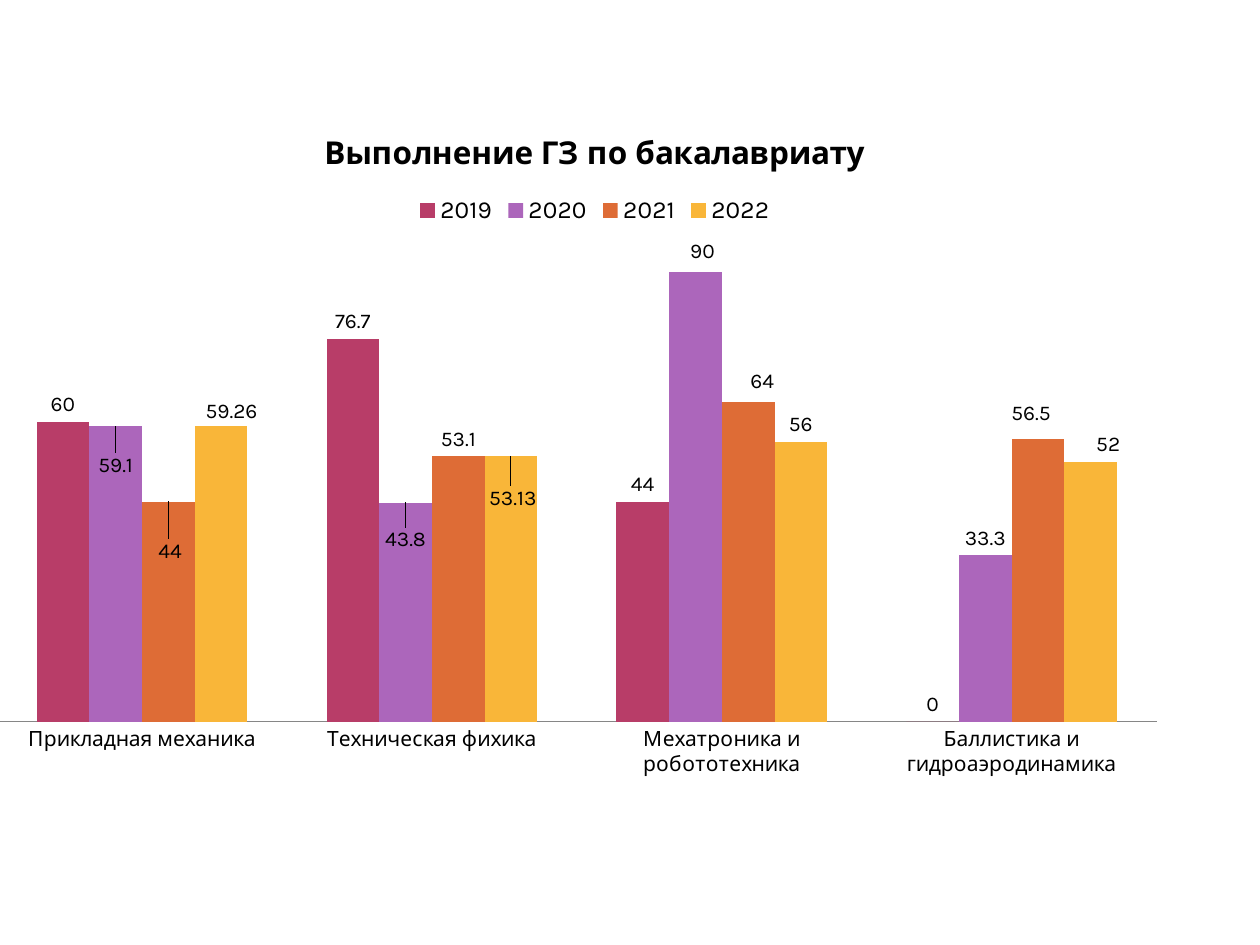
from lxml import etree
from pptx import Presentation
from pptx.chart.data import CategoryChartData
from pptx.dml.color import RGBColor
from pptx.enum import chart as kinds
from pptx.oxml.ns import qn
from pptx.util import Pt

BLACK = RGBColor(0x00, 0x00, 0x00)
AXIS_GRAY = RGBColor(0x86, 0x86, 0x86)
CRIMSON = RGBColor(0xB8, 0x3D, 0x68)
PURPLE = RGBColor(0xAC, 0x66, 0xBB)
ORANGE = RGBColor(0xDE, 0x6C, 0x36)
YELLOW = RGBColor(0xF9, 0xB6, 0x39)
FONT = "Karla"

CHART_BOX = (-2, 60.5, 683.5, 391)
PLOT_AREA = {"x": 0, "y": 0.17, "w": 0.97, "h": 0.73}
CATEGORIES = ["Прикладная механика", "Техническая фихика",
              "Мехатроника и робототехника", "Баллистика и гидроаэродинамика"]
# Year, values, colour, and label shifts in points by category index
YEARS = [
    ("2019", (60, 76.7, 44, 0), CRIMSON, {}),
    ("2020", (59.1, 43.8, 90, 33.3), PURPLE, {0: (0, 32), 1: (0, 31), 2: (4, -2)}),
    ("2021", (44, 53.1, 64, 56.5), ORANGE, {0: (1, 38), 2: (8, -2), 3: (-4, -5)}),
    ("2022", (59.26, 53.13, 56, 52), YELLOW, {0: (6, 2), 1: (1, 34), 3: (10, 0)}),
]


def format_font(font, size, bold=False):
    font.name = FONT
    font.size = Pt(size)
    font.bold = bold
    font.color.rgb = BLACK


def manual_layout(settings):
    """Return a c:layout element holding the given settings in order."""
    layout = etree.Element(qn("c:layout"))
    manual = etree.SubElement(layout, qn("c:manualLayout"))
    for name, value in settings.items():
        etree.SubElement(manual, qn(f"c:{name}")).set("val", str(value))
    return layout


def place_plot(chart):
    plot_area = chart._chartSpace.find(".//" + qn("c:plotArea"))
    for old_layout in plot_area.findall(qn("c:layout")):
        plot_area.remove(old_layout)
    modes = {"layoutTarget": "inner", "xMode": "edge", "yMode": "edge"}
    plot_area.insert(0, manual_layout({**modes, **PLOT_AREA}))


def format_series(series, color, shifts, width, height):
    series.format.fill.solid()
    series.format.fill.fore_color.rgb = color
    series.invert_if_negative = False
    labels = series.data_labels
    labels.show_value = True
    labels.position = kinds.XL_LABEL_POSITION.OUTSIDE_END
    format_font(labels.font, 12)

    for index in shifts:
        label = series.points[index].data_label
        label.position = kinds.XL_LABEL_POSITION.OUTSIDE_END
        format_font(label.font, 12)
    for element in series._element.iter(qn("c:dLbl")):
        index_element = element.find(qn("c:idx"))
        right, down = shifts[int(index_element.get("val"))]
        index_element.addnext(manual_layout(
            {"x": round(right / width, 4), "y": round(down / height, 4)}))


def add_admissions_chart(slide, left, top, width, height):
    data = CategoryChartData()
    data.categories = CATEGORIES
    for year, values, _, _ in YEARS:
        data.add_series(year, values)
    chart = slide.shapes.add_chart(
        kinds.XL_CHART_TYPE.COLUMN_CLUSTERED,
        Pt(left), Pt(top), Pt(width), Pt(height), data).chart
    format_font(chart.font, 10)

    chart.has_title = True
    run = chart.chart_title.text_frame.paragraphs[0].add_run()
    run.text = "Выполнение ГЗ по бакалавриату"
    format_font(run.font, 18, bold=True)
    chart.chart_title.include_in_layout = False

    chart.has_legend = True
    chart.legend.position = kinds.XL_LEGEND_POSITION.TOP
    chart.legend.include_in_layout = False
    format_font(chart.legend.font, 14)

    category_axis = chart.category_axis
    category_axis.major_tick_mark = kinds.XL_TICK_MARK.NONE
    category_axis.format.line.color.rgb = AXIS_GRAY
    category_axis.format.line.width = Pt(0.75)
    format_font(category_axis.tick_labels.font, 12)

    value_axis = chart.value_axis
    value_axis.minimum_scale = 0
    value_axis.maximum_scale = 100
    value_axis.has_major_gridlines = False
    value_axis.visible = False

    plot = chart.plots[0]
    plot.gap_width = 150
    plot.overlap = 0
    plot.vary_by_categories = False
    for series, (_, _, color, shifts) in zip(plot.series, YEARS):
        format_series(series, color, shifts, width, height)
    place_plot(chart)


def main():
    presentation = Presentation()
    presentation.slide_width = Pt(720)
    presentation.slide_height = Pt(540)
    slide = presentation.slides.add_slide(presentation.slide_layouts[6])
    add_admissions_chart(slide, *CHART_BOX)
    presentation.save("out.pptx")


if __name__ == "__main__":
    main()
